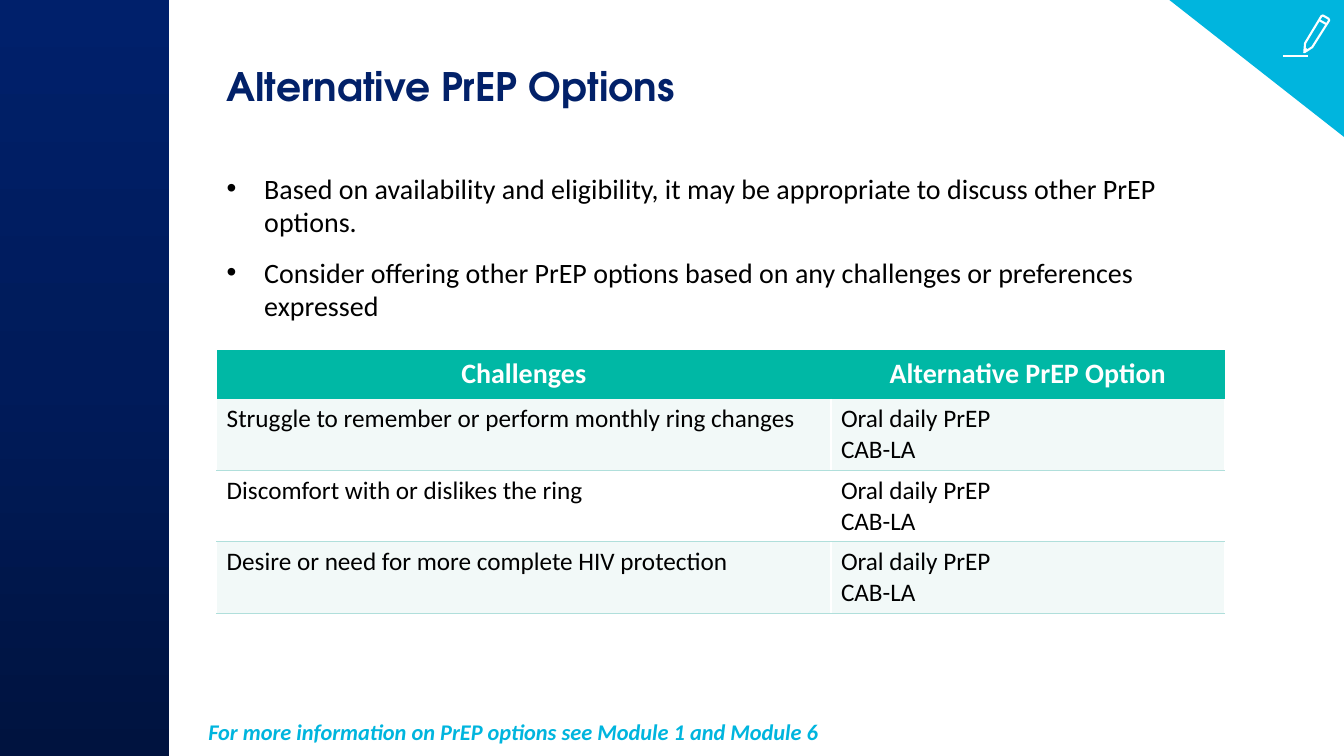
from copy import deepcopy
from dataclasses import dataclass

from lxml import etree
from pptx import Presentation
from pptx.dml.color import RGBColor
from pptx.enum.shapes import MSO_CONNECTOR, MSO_SHAPE
from pptx.enum.text import MSO_ANCHOR, PP_ALIGN
from pptx.oxml.ns import qn
from pptx.util import Cm, Pt

RECTANGLE = MSO_SHAPE.RECTANGLE
RIGHT_TRIANGLE = MSO_SHAPE.RIGHT_TRIANGLE
STRAIGHT = MSO_CONNECTOR.STRAIGHT
MIDDLE = MSO_ANCHOR.MIDDLE
TOP = MSO_ANCHOR.TOP
CENTER = PP_ALIGN.CENTER
LEFT = PP_ALIGN.LEFT

SLIDE_WIDTH, SLIDE_HEIGHT = 33.87, 19.05
CONTENT_LEFT, CONTENT_WIDTH = 5.46, 25.4
PLAIN_TABLE_STYLE = "{2D5ABB26-0587-4C30-8999-92F81FD0307C}"

BULLETS = [
    "Based on availability and eligibility, it may be appropriate to discuss other PrEP options.",
    "Consider offering other PrEP options based on any challenges or preferences expressed",
]
HEADINGS = ["Challenges", "Alternative PrEP Option"]
CHALLENGES = [
    "Struggle to remember or perform monthly ring changes",
    "Discomfort with or dislikes the ring",
    "Desire or need for more complete HIV protection",
]
ALTERNATIVES = ["Oral daily PrEP", "CAB-LA"]

PENCIL_OUTLINE = [
    (33.07, 1.19), (32.87, 1.32), (32.89, 1.09), (33.3, 0.41),
    (33.34, 0.39), (33.48, 0.47), (33.5, 0.51),
]
PENCIL_STROKES = [
    (33.25, 0.51, 33.43, 0.61),
    (32.89, 1.22, 32.94, 1.27),
    (32.33, 1.42, 32.97, 1.42),
]


@dataclass(frozen=True)
class Theme:
    heading_font: str = "TeX Gyre Adventor"
    body_font: str = "Calibri"
    navy: str = "022169"
    cyan: str = "00B5DE"
    teal: str = "00B8A5"
    pale: str = "F2F9F8"
    rule: str = "B0DFDB"
    black: str = "000000"
    white: str = "FFFFFF"
    sidebar: tuple = ("00133F", "001B5A", "00206B")
    title_size: int = 28
    body_size: int = 20
    cell_size: int = 18
    note_size: int = 16


def rgb(color):
    return RGBColor.from_string(color)


class SlideBuilder:
    def __init__(self, slide, theme):
        self.shapes = slide.shapes
        self.theme = theme

    def text_run(self, paragraph, text, size, color, font=None, bold=False, italic=False):
        run = paragraph.add_run()
        run.text = text
        run.font.name = font or self.theme.body_font
        run.font.size = Pt(size)
        run.font.color.rgb = rgb(color)
        run.font.bold = bold
        run.font.italic = italic

    def text_frame(self, left, top, width, height):
        frame = self.shapes.add_textbox(Cm(left), Cm(top), Cm(width), Cm(height)).text_frame
        frame.word_wrap = True
        return frame

    def label(self, left, top, width, height, text, size, color, **style):
        frame = self.text_frame(left, top, width, height)
        self.text_run(frame.paragraphs[0], text, size, color, **style)

    def bullets(self, left, top, width, height, items):
        frame = self.text_frame(left, top, width, height)
        for index, item in enumerate(items):
            paragraph = frame.add_paragraph() if index else frame.paragraphs[0]
            properties = paragraph._p.get_or_add_pPr()
            properties.set("marL", str(Cm(0.95)))
            properties.set("indent", str(Cm(-0.95)))
            etree.SubElement(properties, qn("a:buFont"), typeface="Arial")
            etree.SubElement(properties, qn("a:buChar"), char="•")
            paragraph.space_before = Pt(6 if index else 0)
            paragraph.space_after = Pt(6)
            self.text_run(paragraph, item, self.theme.body_size, self.theme.black)

    def shape(self, kind, left, top, width, height):
        shape = self.shapes.add_shape(kind, Cm(left), Cm(top), Cm(width), Cm(height))
        shape.shadow.inherit = False
        shape.line.fill.background()
        return shape

    def sidebar(self, width):
        shape = self.shape(RECTANGLE, 0, 0, width, SLIDE_HEIGHT)
        shape.fill.gradient()
        shape.fill.gradient_angle = 90
        stop_list = shape._element.spPr.find(".//" + qn("a:gsLst"))
        stop_list.insert(1, deepcopy(stop_list[0]))
        for index, stop in enumerate(shape.fill.gradient_stops):
            stop.position = index / 2
            stop.color.rgb = rgb(self.theme.sidebar[index])

    def corner(self, width, height):
        shape = self.shape(RIGHT_TRIANGLE, SLIDE_WIDTH - width, 0, width, height)
        shape.rotation = 180
        shape.fill.solid()
        shape.fill.fore_color.rgb = rgb(self.theme.cyan)

    def stroke(self, line):
        line.color.rgb = rgb(self.theme.white)
        line.width = Pt(1.5)

    def outline(self, points):
        start, *others = [(Cm(x), Cm(y)) for x, y in points]
        builder = self.shapes.build_freeform(*start)
        builder.add_line_segments(others, close=True)
        shape = builder.convert_to_shape()
        shape.shadow.inherit = False
        shape.fill.background()
        self.stroke(shape.line)

    def line(self, *ends):
        connector = self.shapes.add_connector(STRAIGHT, *map(Cm, ends))
        etree.SubElement(connector._element.spPr, qn("a:effectLst"))
        self.stroke(connector.line)

    def border(self, cell, side, color, width):
        properties = cell._tc.get_or_add_tcPr()
        line = etree.SubElement(properties, qn(f"a:ln{side}"), w=str(Pt(width)))
        fill = etree.SubElement(line, qn("a:solidFill"))
        etree.SubElement(fill, qn("a:srgbClr"), val=color)

    def cell(self, cell, lines, fill, heading=False):
        theme = self.theme
        if not heading:
            self.border(cell, "L", theme.white, 1)
            self.border(cell, "R", theme.white, 1)
            self.border(cell, "B", theme.rule, 0.83)
        cell.fill.solid()
        cell.fill.fore_color.rgb = rgb(fill)
        cell.vertical_anchor = MIDDLE if heading else TOP
        size = theme.body_size if heading else theme.cell_size
        color = theme.white if heading else theme.black
        for index, text in enumerate(lines):
            frame = cell.text_frame
            paragraph = frame.add_paragraph() if index else frame.paragraphs[0]
            paragraph.alignment = CENTER if heading else LEFT
            self.text_run(paragraph, text, size, color, bold=heading)

    def options_table(self, left, top, column_widths, row_heights):
        theme = self.theme
        frame = self.shapes.add_table(
            len(row_heights), len(column_widths), Cm(left), Cm(top),
            Cm(sum(column_widths)), Cm(sum(row_heights)))
        table = frame.table
        table._tbl.tblPr.find(qn("a:tableStyleId")).text = PLAIN_TABLE_STYLE
        for column, width in zip(table.columns, column_widths):
            column.width = Cm(width)
        for row, height in zip(table.rows, row_heights):
            row.height = Cm(height)
        for column, heading in enumerate(HEADINGS):
            self.cell(table.cell(0, column), [heading], theme.teal, heading=True)
        for row, challenge in enumerate(CHALLENGES, 1):
            fill = theme.pale if row % 2 else theme.white
            self.cell(table.cell(row, 0), [challenge], fill)
            self.cell(table.cell(row, 1), ALTERNATIVES, fill)


def main():
    presentation = Presentation()
    presentation.slide_width = Cm(SLIDE_WIDTH)
    presentation.slide_height = Cm(SLIDE_HEIGHT)
    theme = Theme()
    builder = SlideBuilder(presentation.slides.add_slide(presentation.slide_layouts[6]), theme)

    builder.sidebar(4.27)
    builder.label(CONTENT_LEFT, 1.45, CONTENT_WIDTH, 2.34, "Alternative PrEP Options",
                  theme.title_size, theme.navy, font=theme.heading_font, bold=True)
    builder.bullets(CONTENT_LEFT, 4.19, CONTENT_WIDTH, 13.16, BULLETS)
    builder.options_table(CONTENT_LEFT, 8.81, [15.48, 9.92], [1.24] + [1.8] * len(CHALLENGES))
    builder.label(5, 17.98, 24.41, 0.94,
                  "For more information on PrEP options see Module 1 and Module 6",
                  theme.note_size, theme.cyan, bold=True, italic=True)
    builder.corner(4.4, 3.45)
    builder.outline(PENCIL_OUTLINE)
    for stroke in PENCIL_STROKES:
        builder.line(*stroke)
    presentation.save("out.pptx")


if __name__ == "__main__":
    main()
